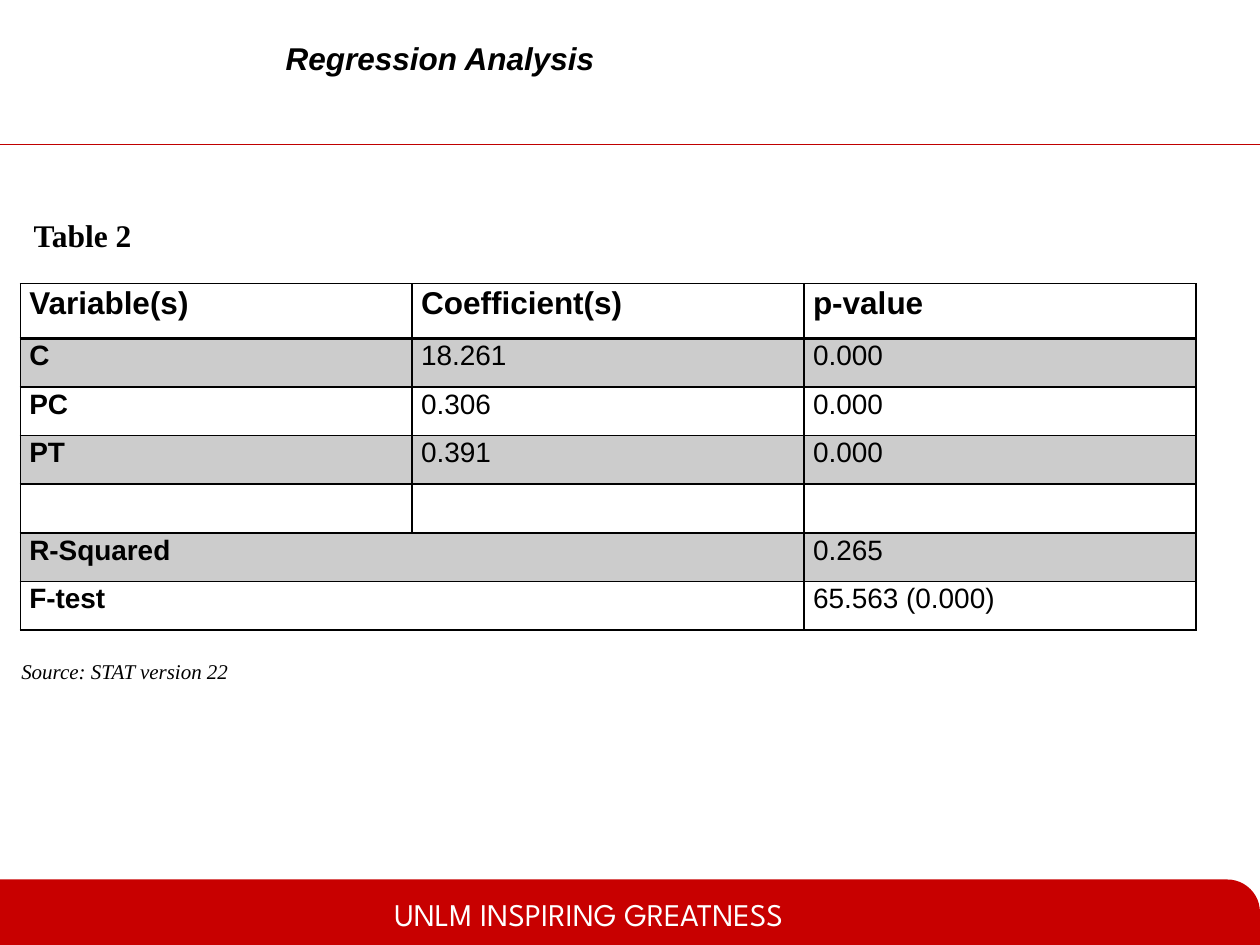
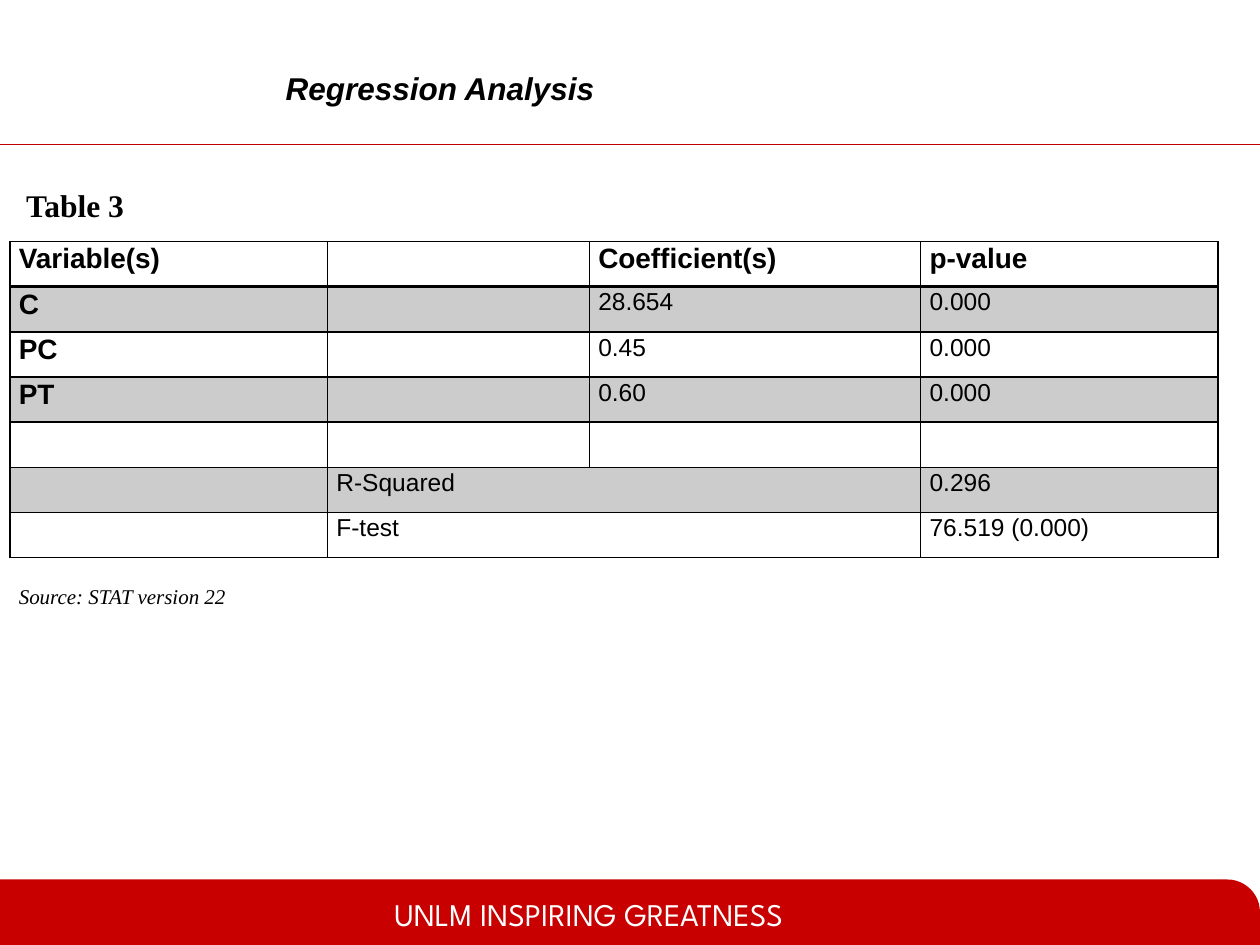
from lxml import etree
from pptx import Presentation
from pptx.dml.color import RGBColor
from pptx.enum.shapes import MSO_CONNECTOR, MSO_SHAPE
from pptx.enum.text import MSO_AUTO_SIZE, PP_ALIGN
from pptx.oxml.ns import qn
from pptx.util import Cm, Pt

STRAIGHT = MSO_CONNECTOR.STRAIGHT
ROUND_ONE_CORNER = MSO_SHAPE.ROUND_1_RECTANGLE
JUSTIFY, LEFT = PP_ALIGN.JUSTIFY, PP_ALIGN.LEFT
FIT_SHAPE = MSO_AUTO_SIZE.SHAPE_TO_FIT_TEXT

BLACK = RGBColor(0, 0, 0)
WHITE = RGBColor(255, 255, 255)
RULE_RED = RGBColor(0xC0, 0, 0)
BAND_RED = RGBColor(0xC8, 0, 0)
STRIPE_GREY = RGBColor(0xCC, 0xCC, 0xCC)

SANS, SERIF, BRAND = "Arial", "Times New Roman", "League Spartan"
SLIDE_W, SLIDE_H = 25.4, 19.05
LINE_SPACING = 1.07
TITLE = "Regression Analysis"
SOURCE = "Source: STAT version 22"
MOTTO = "UNLM INSPIRING GREATNESS"

SLIDES = [
    {
        "title_top": 0.66,
        "caption": ("Table 2", 0.43, 4.24),
        "source": (0.18, 13.16),
        "table_at": (0.41, 5.72),
        "columns": [7.9, 7.9, 7.9],
        "row_heights": [1.1] + [0.98] * 6,
        "sizes": {"head": 18, "label": 16, "value": 16},
        "merged": [(5, 0, 1), (6, 0, 1)],
        "rows": [
            ["Variable(s)", "Coefficient(s)", "p-value"],
            ["C", "18.261", "0.000"],
            ["PC", "0.306", "0.000"],
            ["PT", "0.391", "0.000"],
            ["", "", ""],
            ["R-Squared", "", "0.265"],
            ["F-test", "", "65.563 (0.000)"],
        ],
    },
    {
        "title_top": 1.27,
        "caption": ("Table 3", 0.28, 3.63),
        "source": (0.13, 11.63),
        "table_at": (0.2, 4.87),
        "columns": [6.4, 5.28, 6.68, 5.99],
        "row_heights": [0.91] * 7,
        "sizes": {"head": 16, "label": 16, "value": 14},
        "merged": [(5, 1, 2), (6, 1, 2)],
        "rows": [
            ["Variable(s)", "", "Coefficient(s)", "p-value"],
            ["C", "", "28.654", "0.000"],
            ["PC", "", "0.45", "0.000"],
            ["PT", "", "0.60", "0.000"],
            ["", "", "", ""],
            ["", "R-Squared", "", "0.296"],
            ["", "F-test", "", "76.519 (0.000)"],
        ],
    },
]


def style(paragraph, size, face, color=BLACK, bold=False, italic=False, align=LEFT):
    paragraph.alignment = align
    font = paragraph.font
    font.size, font.name, font.bold, font.italic = Pt(size), face, bold, italic
    font.color.rgb = color


def add_text(slide, text, left, top, width, height, size, face, **look):
    box = slide.shapes.add_textbox(Cm(left), Cm(top), Cm(width), Cm(height))
    frame = box.text_frame
    frame.word_wrap = True
    frame.auto_size = FIT_SHAPE
    frame.text = text
    style(frame.paragraphs[0], size, face, **look)


def add_frame(slide):
    rule = slide.shapes.add_connector(STRAIGHT, 0, Cm(2.92), Cm(SLIDE_W), Cm(2.92))
    rule.line.color.rgb = RULE_RED
    rule.line.width = Pt(0.75)
    etree.SubElement(rule._element.spPr, qn("a:effectLst"))

    band_top = 17.73
    band = slide.shapes.add_shape(
        ROUND_ONE_CORNER, 0, Cm(band_top), Cm(SLIDE_W), Cm(SLIDE_H - band_top))
    band.adjustments[0] = 0.5
    band.shadow.inherit = False
    band.fill.solid()
    band.fill.fore_color.rgb = BAND_RED
    band.line.fill.background()
    add_text(slide, MOTTO, 7.7, 17.91, 9, 1.02, 18, BRAND, color=WHITE)


def set_borders(cell, row):
    properties = cell._tc.get_or_add_tcPr()
    widths = {"lnL": 1, "lnR": 1, "lnT": 2 if row == 1 else 1, "lnB": 2 if row == 0 else 1}
    for position, (side, width) in enumerate(widths.items()):
        border = etree.Element(qn(f"a:{side}"), w=str(Pt(width)))
        fill = etree.SubElement(border, qn("a:solidFill"))
        etree.SubElement(fill, qn("a:srgbClr"), val=str(BLACK))
        properties.insert(position, border)


def add_results(slide, content):
    rows, columns, heights = content["rows"], content["columns"], content["row_heights"]
    left, top = content["table_at"]
    results = slide.shapes.add_table(
        len(rows), len(columns), Cm(left), Cm(top), Cm(sum(columns)), Cm(sum(heights))).table
    for column, width in zip(results.columns, columns):
        column.width = Cm(width)
    for row, height in zip(results.rows, heights):
        row.height = Cm(height)
    for r, values in enumerate(rows):
        for c, value in enumerate(values):
            cell = results.cell(r, c)
            cell.margin_left = cell.margin_right = Cm(0.18)
            cell.margin_top = cell.margin_bottom = 0
            if r % 2:
                cell.fill.solid()
                cell.fill.fore_color.rgb = STRIPE_GREY
            else:
                cell.fill.background()
            set_borders(cell, r)
            role = "head" if r == 0 else "label" if c == 0 else "value"
            cell.text = value
            paragraph = cell.text_frame.paragraphs[0]
            paragraph.line_spacing = LINE_SPACING
            style(paragraph, content["sizes"][role], SANS, bold=role != "value", align=JUSTIFY)
    for row, first, last in content["merged"]:
        results.cell(row, first).merge(results.cell(row, last))


def main():
    deck = Presentation()
    deck.slide_width, deck.slide_height = Cm(SLIDE_W), Cm(SLIDE_H)
    for content in SLIDES:
        slide = deck.slides.add_slide(deck.slide_layouts[6])
        add_frame(slide)
        add_results(slide, content)
        add_text(slide, SOURCE, *content["source"], 9.32, 0.76, 12, SERIF,
                 italic=True, align=JUSTIFY)
        add_text(slide, *content["caption"], 5.84, 1.02, 18, SERIF, bold=True, align=JUSTIFY)
        add_text(slide, TITLE, 5.51, content["title_top"], 10.6, 1.02, 18, SANS,
                 bold=True, italic=True)
    deck.save("out.pptx")


if __name__ == "__main__":
    main()
